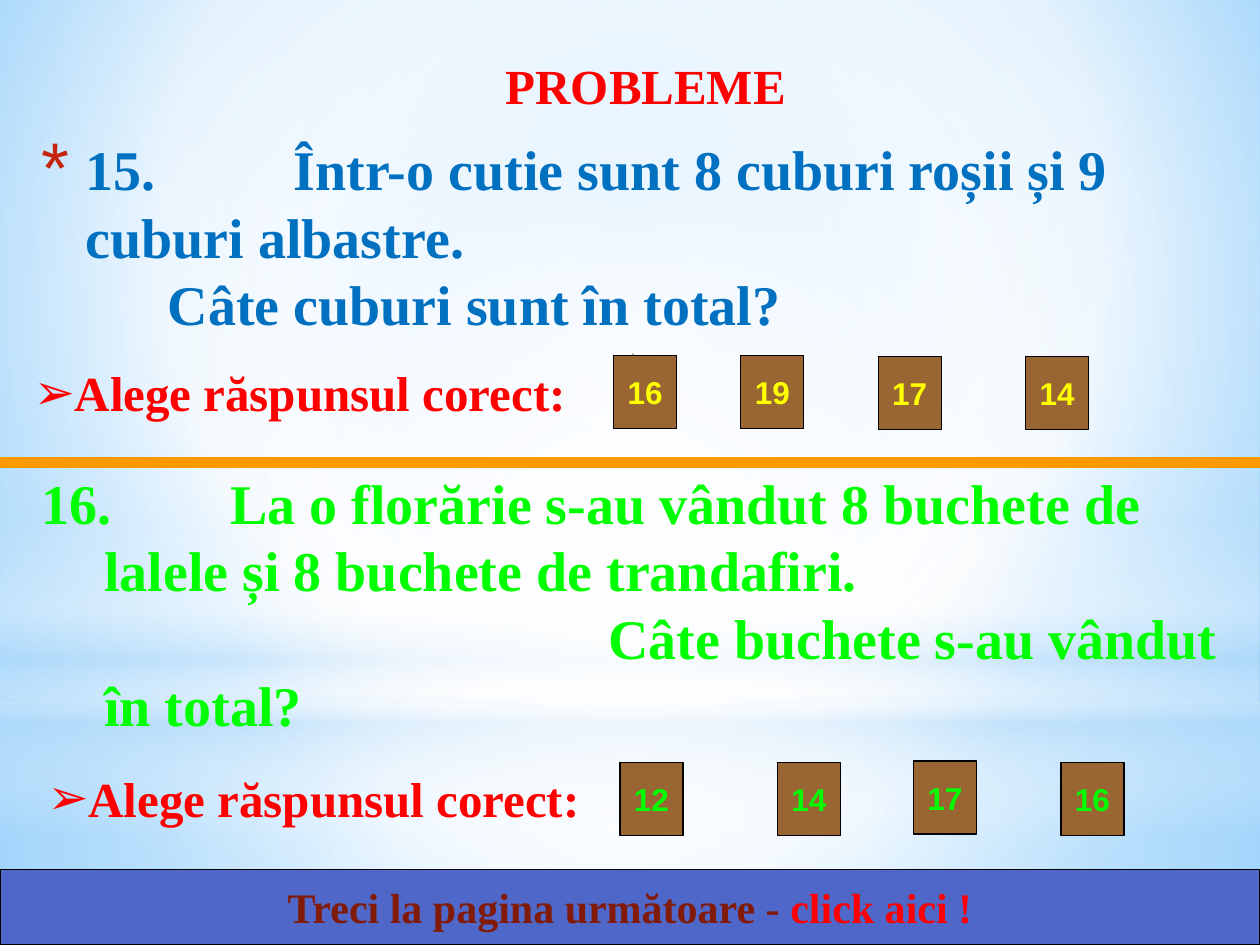
from dataclasses import dataclass

from lxml import etree
from pptx import Presentation
from pptx.dml.color import RGBColor as RGB
from pptx.enum.shapes import MSO_CONNECTOR as LINK, MSO_SHAPE as SHAPE
from pptx.enum.text import MSO_ANCHOR as ANCHOR, MSO_AUTO_SIZE as AUTO, PP_ALIGN as ALIGN
from pptx.oxml import parse_xml
from pptx.oxml.ns import nsdecls, qn
from pptx.util import Inches, Pt


@dataclass(frozen=True)
class Theme:
    serif: str = "Times New Roman"
    sans: str = "Arial"
    red: str = "FF0000"
    blue: str = "0070C0"
    green: str = "00FF00"
    yellow: str = "FFFF00"
    brown: str = "996633"
    orange: str = "FF9900"
    indigo: str = "4E67C8"
    maroon: str = "821A08"
    rust: str = "C3260C"
    black: str = "000000"
    white: str = "FFFFFF"
    sky: str = "B4DCFA"
    task: int = 32
    head: int = 28
    link: int = 24
    num: int = 18
    dot: int = 8


T = Theme()
MID = (50, 50, 50, 50)


def box(*at):
    return [Inches(n) for n in at]


def style(run, size, color, font=T.serif, bold=True):
    run.font.name, run.font.size, run.font.bold = font, Pt(size), bold
    run.font.color.rgb = RGB.from_string(color)


def blend(stops, rect=None):
    """Gradient fill: radial towards rect, or top to bottom without one."""
    marks = "".join(
        f'<a:gs pos="{pos * 1000}"><a:srgbClr val="{color}">'
        f'<a:alpha val="{alpha * 1000}"/></a:srgbClr></a:gs>'
        for pos, color, alpha in stops)
    if rect:
        sides = " ".join(f'{side}="{n * 1000}"' for side, n in zip("ltrb", rect))
        way = f'<a:path path="circle"><a:fillToRect {sides}/></a:path>'
    else:
        way = '<a:lin ang="5400000" scaled="0"/>'
    return parse_xml(f'<a:gradFill {nsdecls("a")} rotWithShape="1">'
                     f'<a:gsLst>{marks}</a:gsLst>{way}</a:gradFill>')


def swap(props, fill):
    old = props.find(qn("a:solidFill"))
    props.replace(old, fill)


def glow(slide, kind, at, stops, rect=MID):
    shape = slide.shapes.add_shape(kind, *box(*at))
    shape.shadow.inherit = False
    shape.line.fill.background()
    shape.fill.solid()
    swap(shape.element.spPr, blend(stops, rect))


def bullet(para, char, color=None, pct=None):
    props = para._p.get_or_add_pPr()
    if color:
        tint = etree.SubElement(props, qn("a:buClr"))
        etree.SubElement(tint, qn("a:srgbClr"), val=color)
    if pct:
        etree.SubElement(props, qn("a:buSzPct"), val=str(pct * 1000))
    etree.SubElement(props, qn("a:buFont"), typeface=T.sans)
    etree.SubElement(props, qn("a:buChar"), char=char)


def indent(para, left, first):
    """Left margin, first-line indent and one-inch default tabs."""
    props = para._p.get_or_add_pPr()
    for name, size in (("marL", left), ("indent", first), ("defTabSz", 1)):
        props.set(name, str(Inches(size)))


def label(slide, at, text, size, color, bold=True, align=ALIGN.LEFT):
    frame = slide.shapes.add_textbox(*box(*at)).text_frame
    frame.word_wrap = True
    frame.text = text
    for para in frame.paragraphs:
        para.alignment = align
        for run in para.runs:
            style(run, size, color, bold=bold)
    return frame.paragraphs


def button(slide, at, fill, parts, size, font):
    """Action button whose parts are (text, colour) pairs."""
    shape = slide.shapes.add_shape(SHAPE.ACTION_BUTTON_CUSTOM, *box(*at))
    shape.shadow.inherit = False
    shape.fill.solid()
    shape.fill.fore_color.rgb = RGB.from_string(fill)
    shape.line.color.rgb = RGB.from_string(T.black)
    shape.line.width = Pt(0.75)
    frame = shape.text_frame
    frame.word_wrap = False
    frame.vertical_anchor = ANCHOR.MIDDLE
    para = frame.paragraphs[0]
    para.alignment = ALIGN.CENTER
    for text, color in parts:
        run = para.add_run()
        run.text = text
        style(run, size, color, font)


def choice(slide, left, top, answers, color):
    """Prompt followed by its answer buttons."""
    para = label(slide, (left, top, 4.52, 0.57), "Alege răspunsul corect:",
                 T.head, T.red)[0]
    bullet(para, "➢")
    for text, x, y in answers:
        button(slide, (x, y, 0.5, 0.58), T.brown, [(text, color)], T.num, T.sans)


def rule(slide, y):
    line = slide.shapes.add_connector(LINK.STRAIGHT, *box(0, y, 10, y))
    line.line.color.rgb = RGB.from_string(T.orange)
    line.line.width = Pt(6)
    etree.SubElement(line._element.spPr, qn("a:effectLst"))


def backdrop(slide):
    slide.background.fill.solid()
    swap(slide.element.find(".//" + qn("p:bgPr")),
         blend([(0, "9ED5FF", 100), (60, T.white, 100), (100, "5BB9FF", 100)],
               (20, 10, 20, 60)))
    glow(slide, SHAPE.RECTANGLE, (0, 5.58, 10, 1.92),
         [(0, T.white, 91), (37, T.white, 76), (100, T.sky, 79)])
    glow(slide, SHAPE.RECTANGLE, (0, 0, 10, 5.58),
         [(0, T.white, 89), (48, T.white, 62), (100, T.sky, 79)])
    glow(slide, SHAPE.RECTANGLE, (0, 4.12, 10, 2.5),
         [(0, T.white, 0), (29, T.white, 30), (45, T.sky, 40),
          (55, T.white, 26), (65, T.sky, 60), (100, T.white, 0)], None)
    glow(slide, SHAPE.OVAL, (0, 1.75, 10, 5.58),
         [(0, T.white, 100), (56, T.white, 0)])


def first(slide):
    """Problem 15, held by the title placeholder above the backdrop."""
    title = slide.shapes.title
    slide.shapes._spTree.append(title._element)
    title.left, title.top, title.width, title.height = box(0.23, 1.02, 9.53, 1.57)
    frame = title.text_frame
    frame.word_wrap = True
    frame.auto_size = AUTO.NONE
    frame.vertical_anchor = ANCHOR.TOP
    para = frame.paragraphs[0]
    para.text = ("15. \tÎntr-o cutie sunt 8 cuburi roșii și 9 cuburi albastre."
                 "\v\tCâte cuburi sunt în total?")
    para.alignment = ALIGN.LEFT
    indent(para, 0.35, -0.35)
    bullet(para, "*", T.rust, 128)
    for run in para.runs:
        style(run, T.task, T.blue)


def second(slide):
    """Problem 16, with its question set far in."""
    story, query = label(
        slide, (0.23, 3.67, 9.77, 1.72),
        "16.\tLa o florărie s-au vândut 8 buchete de lalele și 8 buchete de "
        "trandafiri.\nCâte buchete s-au vândut în total?", T.task, T.green)
    indent(story, 0.5, -0.5)
    indent(query, 0.5, 4)


def main():
    deck = Presentation()
    deck.slide_width, deck.slide_height = box(10, 7.5)
    slide = deck.slides.add_slide(deck.slide_layouts[5])
    backdrop(slide)

    # Heading and first problem
    first(slide)
    label(slide, (0.25, 0.39, 9.75, 0.57), "PROBLEME", T.head, T.red,
          align=ALIGN.CENTER)
    dot = label(slide, (0, 2.66, 10, 0.28), ".", T.dot, T.brown, False, ALIGN.CENTER)
    indent(dot[0], 0.25, -0.2)
    choice(slide, 0.17, 2.83, [("16", 4.87, 2.82), ("19", 5.88, 2.82),
                               ("17", 6.97, 2.83), ("14", 8.14, 2.83)], T.yellow)

    # Second problem
    rule(slide, 3.67)
    second(slide)
    choice(slide, 0.28, 6.05, [("12", 4.92, 6.05), ("14", 6.17, 6.05),
                               ("17", 7.25, 6.04), ("16", 8.42, 6.05)], T.green)

    # Link to the next page
    button(slide, (0, 6.9, 10, 0.6), T.indigo,
           [("Treci la pagina următoare - ", T.maroon), ("click aici !", T.red)],
           T.link, T.serif)
    deck.save("out.pptx")


if __name__ == "__main__":
    main()
